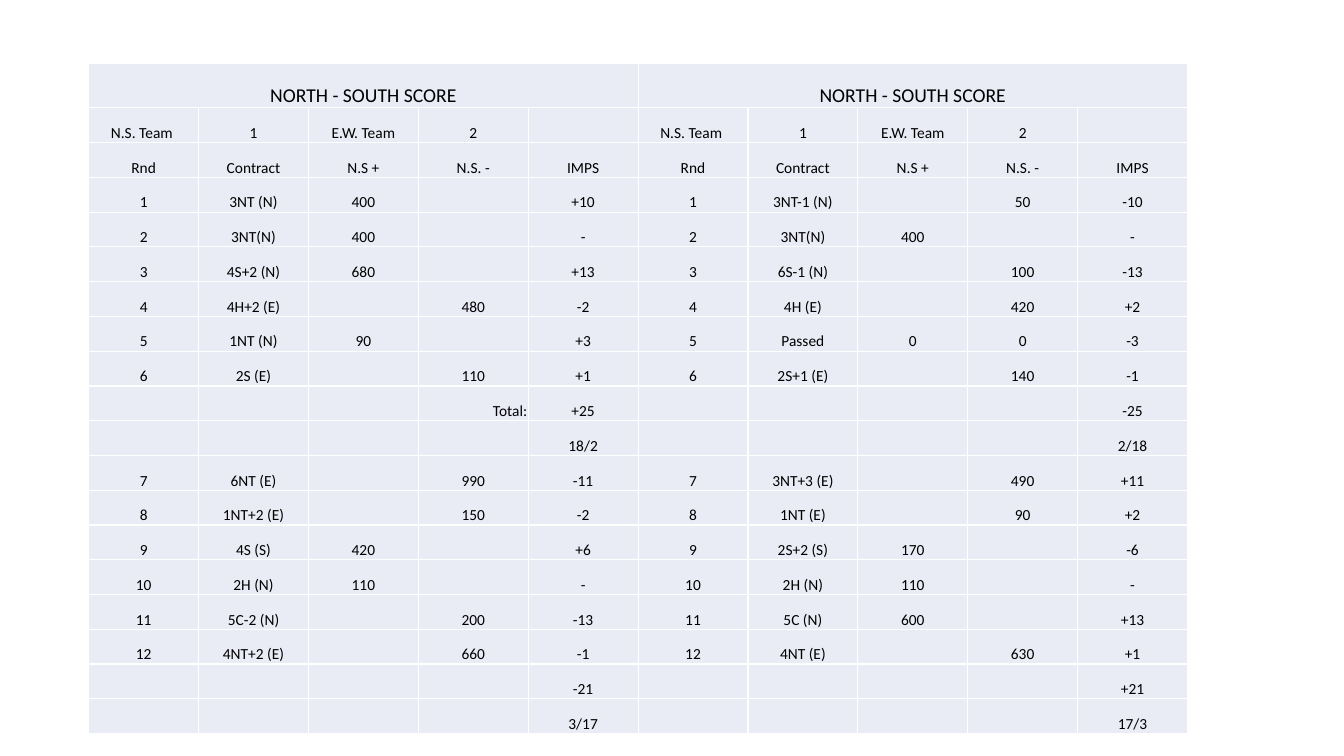
import pptx
import pptx.dml.color
import pptx.enum.text
import pptx.util

Inches = pptx.util.Inches
Pt = pptx.util.Pt
Align = pptx.enum.text.PP_ALIGN

COLORS = {"cell": "E9EBF5", "text": "000000"}
COLUMN_WIDTH = 1.09
TITLE_HEIGHT = 0.44
TABLE_HEIGHT = 6.65
HALF = 5  # columns in each team's half

TITLE = ["NORTH - SOUTH SCORE", "", "", "", ""]
TEAMS = ["N.S. Team ", "1", "E.W. Team", "2", ""]
HEADINGS = ["Rnd", "Contract", "N.S +", "N.S. -", "IMPS"]

# Each row: contract, N.S. plus, N.S. minus and IMPS for the left, then the right half
FIRST_ROUNDS = [
    ["3NT (N)", "400", "", "+10", "3NT-1 (N)", "", "50", "-10"],
    ["3NT(N)", "400", "", "-", "3NT(N)", "400", "", "-"],
    ["4S+2 (N)", "680", "", "+13", "6S-1 (N)", "", "100", "-13"],
    ["4H+2 (E)", "", "480", "-2", "4H (E)", "", "420", "+2"],
    ["1NT (N)", "90", "", "+3", "Passed", "0", "0", "-3"],
    ["2S (E)", "", "110", "+1", "2S+1 (E)", "", "140", "-1"],
]
LAST_ROUNDS = [
    ["6NT (E)", "", "990", "-11", "3NT+3 (E)", "", "490", "+11"],
    ["1NT+2 (E)", "", "150", "-2", "1NT (E)", "", "90", "+2"],
    ["4S (S)", "420", "", "+6", "2S+2 (S)", "170", "", "-6"],
    ["2H (N)", "110", "", "-", "2H (N)", "110", "", "-"],
    ["5C-2 (N)", "", "200", "-13", "5C (N)", "600", "", "+13"],
    ["4NT+2 (E)", "", "660", "-1", "4NT (E)", "", "630", "+1"],
]


def number_rounds(rounds, start):
    """Put the round number in front of both halves of every row."""
    return [[str(number), *row[:4], str(number), *row[4:]]
            for number, row in enumerate(rounds, start)]


def total_row(left, right, label=""):
    return ["", "", "", label, left, "", "", "", "", right]


rows = [
    TITLE * 2,
    TEAMS * 2,
    HEADINGS * 2,
    *number_rounds(FIRST_ROUNDS, 1),
    total_row("+25", "-25", "Total:"),
    total_row("18/2", "2/18"),
    *number_rounds(LAST_ROUNDS, 7),
    total_row("-21", "+21"),
    total_row("3/17", "17/3"),
]

deck = pptx.Presentation()
deck.slide_width = Inches(13.33)
deck.slide_height = Inches(7.5)
page = deck.slides.add_slide(deck.slide_layouts[6])

table = page.shapes.add_table(
    len(rows), 2 * HALF, Inches(0.88), Inches(0.63),
    Inches(2 * HALF * COLUMN_WIDTH), Inches(TABLE_HEIGHT)).table
table.first_row = False
table.horz_banding = False
for column in table.columns:
    column.width = Inches(COLUMN_WIDTH)

row_height = (TABLE_HEIGHT - TITLE_HEIGHT) / (len(rows) - 1)
for row_index, texts in enumerate(rows):
    is_title = row_index == 0
    table.rows[row_index].height = Inches(TITLE_HEIGHT if is_title else row_height)
    for column_index, text in enumerate(texts):
        cell = table.cell(row_index, column_index)
        cell.fill.solid()
        cell.fill.fore_color.rgb = pptx.dml.color.RGBColor.from_string(COLORS["cell"])
        cell.vertical_anchor = pptx.enum.text.MSO_ANCHOR.BOTTOM
        cell.margin_left = cell.margin_right = cell.margin_top = Inches(0.01)
        cell.margin_bottom = 0
        cell.text = text
        para = cell.text_frame.paragraphs[0]
        para.alignment = Align.RIGHT if text == "Total:" else Align.CENTER
        para.font.name = "Calibri"
        para.font.size = Pt(14 if is_title else 11)
        para.font.color.rgb = pptx.dml.color.RGBColor.from_string(COLORS["text"])

for first in (0, HALF):
    table.cell(0, first).merge(table.cell(0, first + HALF - 1))

deck.save("out.pptx")
